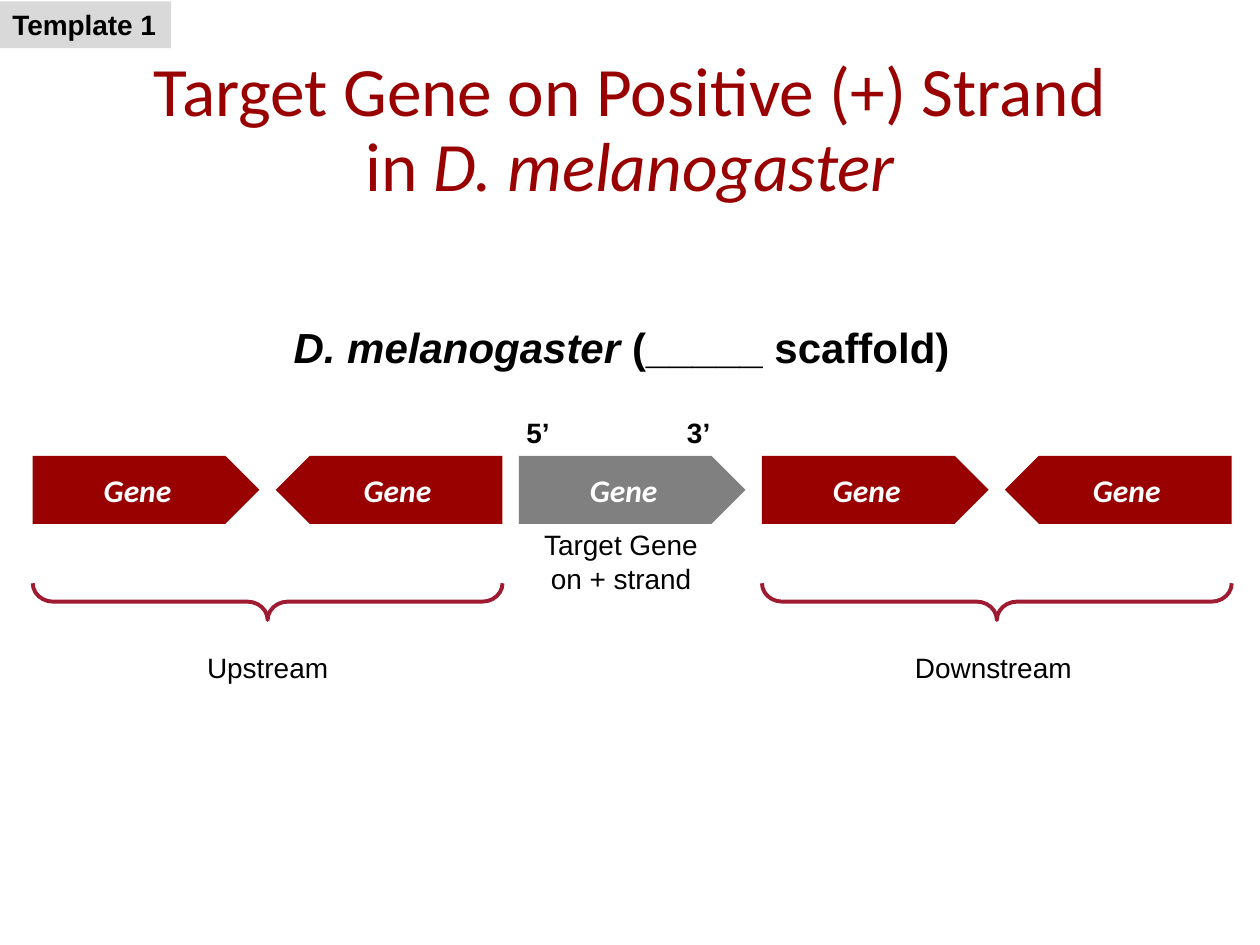
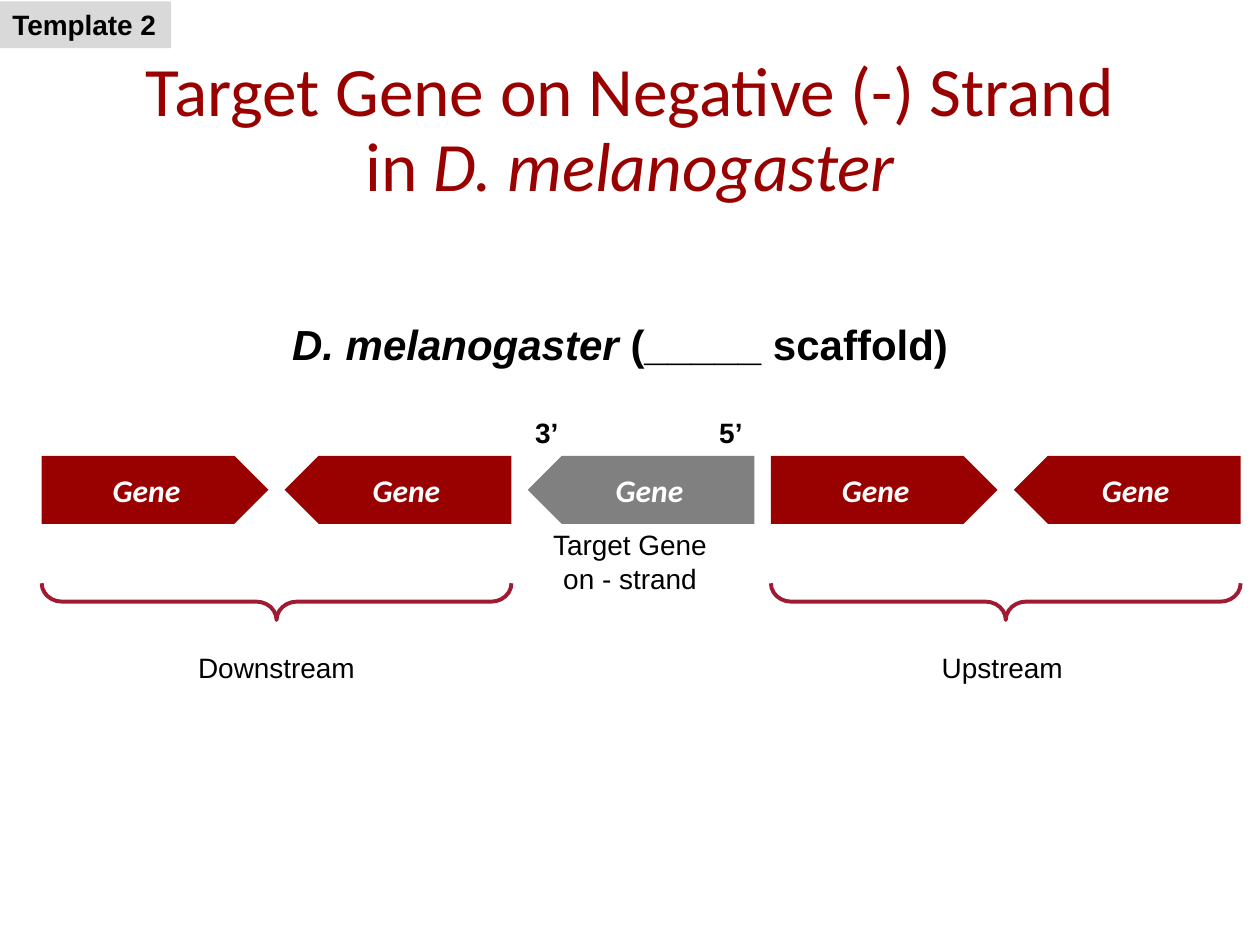
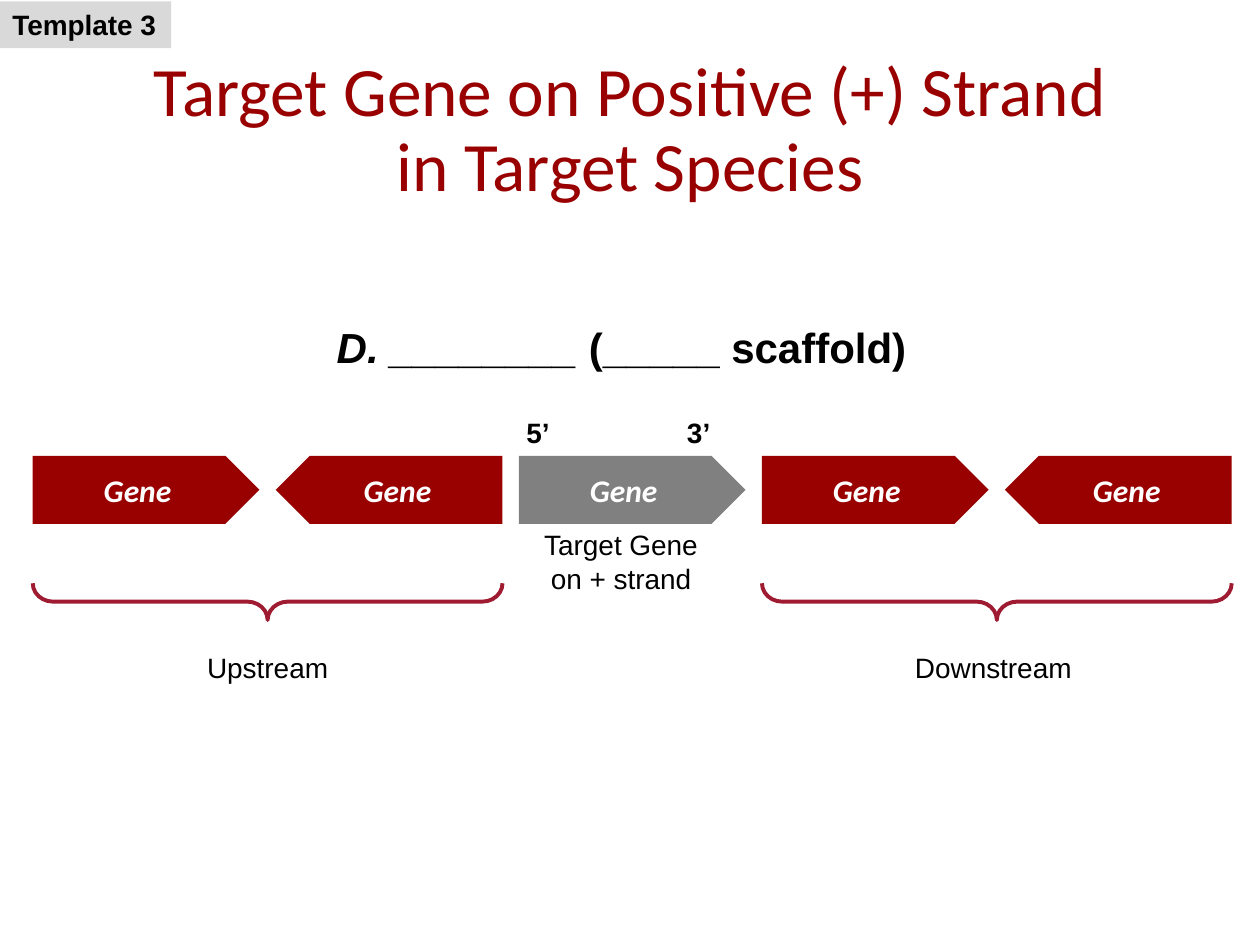
"""Build three gene neighbourhood templates for positive and negative strands."""
from lxml.etree import SubElement
from pptx import Presentation
from pptx.dml.color import RGBColor
from pptx.enum.shapes import MSO_SHAPE
from pptx.enum.text import MSO_ANCHOR, MSO_AUTO_SIZE, PP_ALIGN
from pptx.oxml.ns import qn
from pptx.util import Cm, Pt

COLORS = {
    "crimson": "990000",
    "brace": "9E1B32",
    "target": "808080",
    "tag": "D9D9D9",
    "black": "000000",
    "white": "FFFFFF",
}
FORMATS = {
    "title": {"name": "Calibri", "size": Pt(39.6)},
    "heading": {"name": "Arial", "size": Pt(24), "bold": True},
    "gene": {"name": "Calibri", "size": Pt(18), "bold": True},
    "label": {"name": "Arial", "size": Pt(16), "bold": True},
    "caption": {"name": "Arial", "size": Pt(16)},
}
TITLE_ONLY = 5
GENE_WIDTH, GENE_HEIGHT, GENE_PITCH, GENE_TOP = 4.57, 1.37, 4.9, 9.19
BRACE_DEPTH, BRACE_MIDDLE = 0.74, 12.13
BRACE_LENGTH = GENE_PITCH + GENE_WIDTH
FLANK_WIDTHS = {"Upstream": 2.97, "Downstream": 3.71}

MELANOGASTER = ("D. melanogaster", True)
POSITIVE = {
    "strand": "Positive (+)", "sign": "+", "ends": "5’\t3’", "end_gap": 3.24,
    "ends_width": 4.32, "row_left": 0.66, "heading_at": (0.03, 6.35),
    "flanks": ("Upstream", "Downstream"), "reverse": (1, 4),
}
NEGATIVE = {
    "strand": "Negative (-)", "sign": "-", "ends": "3’\t5’", "end_gap": 3.71,
    "ends_width": 4.8, "row_left": 0.84, "heading_at": (0, 6.3),
    "flanks": ("Downstream", "Upstream"), "reverse": (1, 2, 4),
}
TEMPLATES = [
    (POSITIVE, MELANOGASTER, "D. melanogaster "),
    (NEGATIVE, MELANOGASTER, "D. melanogaster "),
    (POSITIVE, ("Target Species", False), "D. ________ "),
]


class GeneDeck:
    """Hold the shared style and the slide being drawn."""

    def __init__(self):
        self.deck = Presentation()
        self.deck.slide_width, self.deck.slide_height = Cm(25.4), Cm(19.05)

    def start_slide(self):
        """Open a new slide with a title placeholder."""
        self.slide = self.deck.slides.add_slide(self.deck.slide_layouts[TITLE_ONLY])

    def set_text(self, frame, paragraphs, style, color="black", align=PP_ALIGN.CENTER):
        """Fill a text frame with paragraphs of (text, italic) runs."""
        for index, runs in enumerate(paragraphs):
            paragraph = frame.add_paragraph() if index else frame.paragraphs[0]
            paragraph.alignment = align
            for text, italic in runs:
                for line_index, line in enumerate(text.split("\n")):
                    if line_index:
                        paragraph.add_line_break()
                    run = paragraph.add_run()
                    run.text = line
                    for attribute, value in FORMATS[style].items():
                        setattr(run.font, attribute, value)
                    run.font.italic = italic
                    run.font.color.rgb = RGBColor.from_string(COLORS[color])

    def title(self, runs):
        """Place and fill the title."""
        title = self.slide.shapes.title
        box = {"left": 1.75, "top": 1.02, "width": 21.9, "height": 2.16}
        for attribute, value in box.items():
            setattr(title, attribute, Cm(value))
        frame = title.text_frame
        frame.auto_size = MSO_AUTO_SIZE.NONE
        frame.vertical_anchor = MSO_ANCHOR.TOP
        self.set_text(frame, [runs], "title", "crimson")
        frame.paragraphs[0].line_spacing = 0.9

    def text(self, left, top, width, height, paragraphs, style="caption",
             wrap=False, align=PP_ALIGN.CENTER):
        """Add a text box and return its frame."""
        frame = self.slide.shapes.add_textbox(
            Cm(left), Cm(top), Cm(width), Cm(height)).text_frame
        frame.word_wrap = wrap
        frame.auto_size = MSO_AUTO_SIZE.SHAPE_TO_FIT_TEXT
        self.set_text(frame, paragraphs, style, align=align)
        return frame

    def shape(self, kind, left, top, width, height, fill=None):
        """Add a flat preset shape without an outline."""
        shape = self.slide.shapes.add_shape(
            kind, Cm(left), Cm(top), Cm(width), Cm(height))
        shape.shadow.inherit = False
        shape.line.fill.background()
        if fill:
            shape.fill.solid()
            shape.fill.fore_color.rgb = RGBColor.from_string(COLORS[fill])
        else:
            shape.fill.background()
        return shape

    def gene(self, left, fill, reverse):
        """Add a gene arrow pointing along its strand."""
        gene = self.shape(MSO_SHAPE.PENTAGON, left, GENE_TOP,
                          GENE_WIDTH, GENE_HEIGHT, fill)
        if reverse:
            gene.element.spPr.get_or_add_xfrm().set("flipH", "1")
        gene.text_frame.vertical_anchor = MSO_ANCHOR.MIDDLE
        self.set_text(gene.text_frame, [[("Gene", True)]], "gene", "white")

    def brace(self, center):
        """Add a downward brace under a pair of genes."""
        brace = self.shape(MSO_SHAPE.LEFT_BRACE, center - BRACE_DEPTH / 2,
                           BRACE_MIDDLE - BRACE_LENGTH / 2, BRACE_DEPTH, BRACE_LENGTH)
        brace.rotation = 270
        brace.element.spPr.get_or_add_xfrm().set("flipV", "1")
        brace.adjustments[0] = 0.55
        brace.line.color.rgb = RGBColor.from_string(COLORS["brace"])
        brace.line.width = Pt(2.25)

    def tag(self, text):
        """Add the corner tag."""
        tag = self.shape(MSO_SHAPE.RECTANGLE, 0, 0.03, 3.45, 0.94, "tag")
        tag.text_frame.word_wrap = False
        tag.text_frame.auto_size = MSO_AUTO_SIZE.SHAPE_TO_FIT_TEXT
        self.set_text(tag.text_frame, [[(text, False)]], "label", align=PP_ALIGN.LEFT)

    def strand_ends(self, layout):
        """Label both ends of the target gene, parted by a tab stop."""
        frame = self.text(layout["row_left"] + 9.7, 8.26, layout["ends_width"], 0.94,
                          [[(layout["ends"], False)]], "label", True, PP_ALIGN.LEFT)
        properties = frame.paragraphs[0]._p.get_or_add_pPr()
        stops = SubElement(properties, qn("a:tabLst"))
        SubElement(stops, qn("a:tab"), pos=str(Cm(layout["end_gap"])), algn="l")

    def neighbourhood(self, layout):
        """Draw the gene row with its braces and captions."""
        row_left = layout["row_left"]
        for index in range(5):
            self.gene(row_left + index * GENE_PITCH,
                      "target" if index == 2 else "crimson",
                      index in layout["reverse"])
        self.strand_ends(layout)
        self.text(row_left + 10.03, 10.52, 3.66, 1.63,
                  [[("Target Gene", False)], [(f"on {layout['sign']} strand", False)]])
        for flank, first_gene, nudge in zip(layout["flanks"], (0, 3), (0, -0.07)):
            center = row_left + first_gene * GENE_PITCH + BRACE_LENGTH / 2
            width = FLANK_WIDTHS[flank]
            self.brace(center)
            self.text(center + nudge - width / 2, 12.98, width, 0.94, [[(flank, False)]])


def main():
    """Build and save the deck."""
    deck = GeneDeck()
    for number, (layout, species, heading) in enumerate(TEMPLATES, 1):
        deck.start_slide()
        deck.title([(f"Target Gene on {layout['strand']} Strand\nin ", False), species])
        deck.text(*layout["heading_at"], 25, 1.27,
                  [[(heading, True), ("(_____ scaffold)", False)]], "heading", True)
        deck.neighbourhood(layout)
        deck.tag(f"Template {number}")
    deck.deck.save("out.pptx")


if __name__ == "__main__":
    main()
